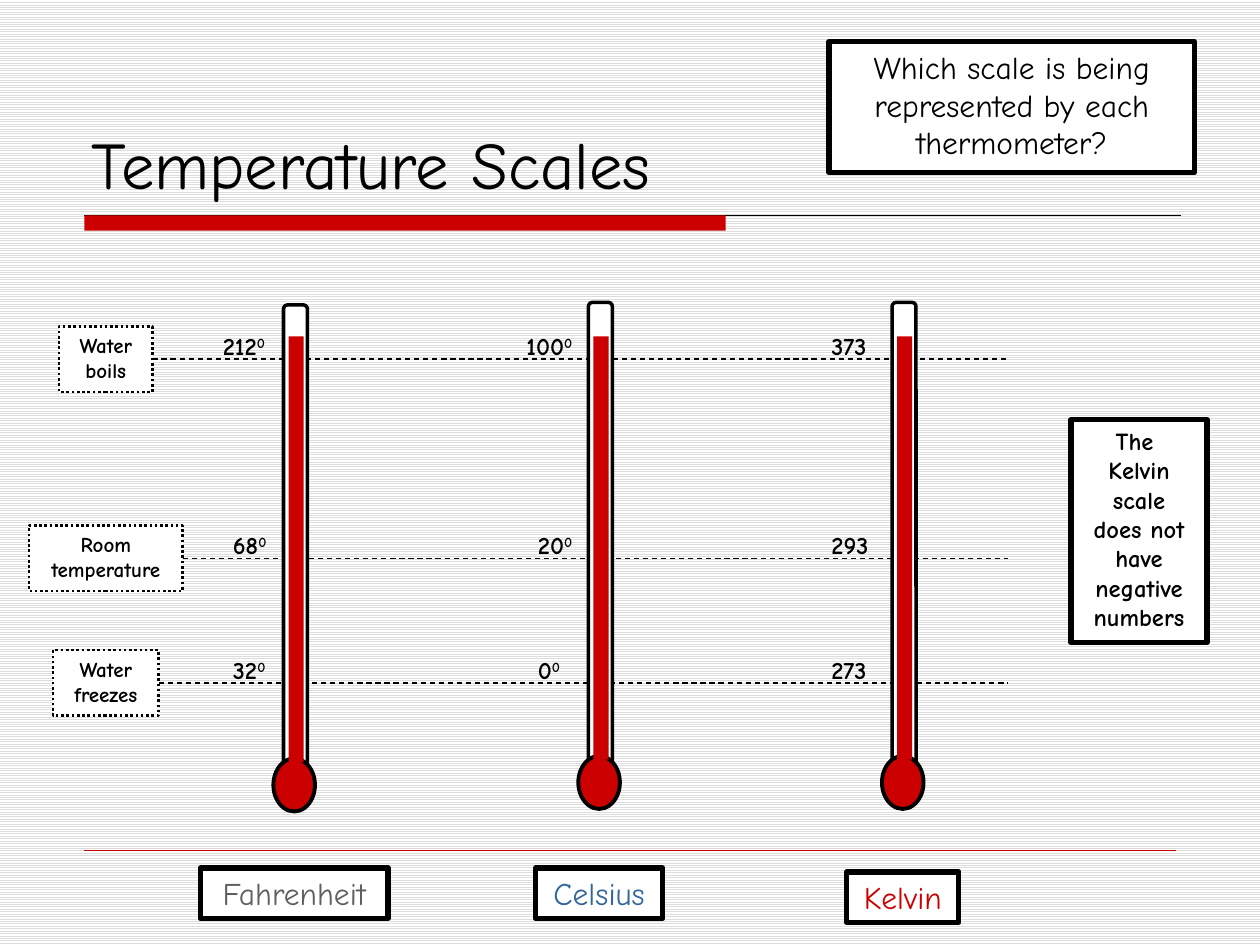
from lxml import etree
from pptx import Presentation
from pptx import util as u
from pptx.dml.color import RGBColor
from pptx.enum import dml, shapes, text
from pptx.oxml.ns import qn

BLACK, WHITE, RED = "000000", "FFFFFF", "CC0000"
SOLID, DASH, DOT = (dml.MSO_LINE.SOLID, dml.MSO_LINE.DASH,
                    dml.MSO_LINE.ROUND_DOT)
SHAPE = shapes.MSO_SHAPE
FIT = text.MSO_AUTO_SIZE.SHAPE_TO_FIT_TEXT


def rgb(value):
    return RGBColor.from_string(value)


class Deck:
    font = "Comic Neue"

    def __init__(self, prs):
        self.s = prs.slides.add_slide(prs.slide_layouts[6])

    def background(self, fore, back):
        fill = self.s.background.fill
        fill.patterned()
        fill.pattern = dml.MSO_PATTERN.LIGHT_HORIZONTAL
        fill.fore_color.rgb = rgb(fore)
        fill.back_color.rgb = rgb(back)

    def shape(self, kind, box, fill, line=0, dash=SOLID):
        sp = self.s.shapes.add_shape(kind, *map(u.Inches, box))
        sp.shadow.inherit = False
        sp.fill.solid()
        sp.fill.fore_color.rgb = rgb(fill)
        if line:
            sp.line.color.rgb = rgb(BLACK)
            sp.line.width = u.Pt(line)
            sp.line.dash_style = dash
        else:
            sp.line.fill.background()
        return sp

    def label(self, sp, words, size, color=BLACK, bold=False, wrap=False,
              align=text.PP_ALIGN.CENTER, anchor=text.MSO_ANCHOR.TOP,
              fit=FIT):
        tf = sp.text_frame
        tf.word_wrap = wrap
        tf.auto_size = fit
        tf.vertical_anchor = anchor
        tf.text = words
        for p in tf.paragraphs:
            p.alignment = align
            for r in p.runs:
                self.style(r, size, color, bold)
        return tf

    def style(self, r, size, color, bold):
        r.font.name = self.font
        r.font.size = u.Pt(size)
        r.font.bold = bold
        r.font.color.rgb = rgb(color)

    def panel(self, box, words, size, color=BLACK, bold=False, wrap=False,
              line=3, dash=SOLID):
        sp = self.shape(SHAPE.RECTANGLE, box, WHITE, line, dash)
        self.label(sp, words, size, color, bold, wrap)
        return sp

    def title(self, box, words):
        sp = self.s.shapes.add_textbox(*map(u.Inches, box))
        self.label(sp, words, 38, wrap=True, align=text.PP_ALIGN.LEFT,
                   anchor=text.MSO_ANCHOR.BOTTOM,
                   fit=text.MSO_AUTO_SIZE.NONE)

    def reading(self, box, number, degree):
        sp = self.s.shapes.add_textbox(*map(u.Inches, box))
        tf = self.label(sp, number, 14, bold=True,
                        align=text.PP_ALIGN.LEFT)
        if degree:
            r = tf.paragraphs[0].add_run()
            r.text = "0"
            self.style(r, 14, BLACK, True)
            r.font._element.set("baseline", "30000")

    def line(self, start, end, color, width, dash=SOLID, source=None):
        c = self.s.shapes.add_connector(
            shapes.MSO_CONNECTOR.STRAIGHT, *map(u.Inches, (*start, *end)))
        c.line.color.rgb = rgb(color)
        c.line.width = u.Pt(width)
        c.line.dash_style = dash
        etree.SubElement(c._element.spPr, qn("a:effectLst"))
        if source is not None:
            c.begin_connect(source, 3)

    def thermometer(self, x, top):
        tube = self.shape(SHAPE.ROUNDED_RECTANGLE, (x, top, 0.19, 3.67),
                          WHITE, 2)
        tube.adjustments[0] = 0.17
        self.shape(SHAPE.OVAL, (x - 0.08, top + 3.6, 0.33, 0.42), RED, 2.25)
        self.shape(SHAPE.RECTANGLE, (x + 0.04, 2.67, 0.12, top + 0.96), RED)


def main():
    prs = Presentation()
    prs.slide_width, prs.slide_height = u.Inches(10), u.Inches(7.5)
    deck = Deck(prs)
    deck.background("DDDDDD", WHITE)

    deck.line((0.67, 1.71), (9.37, 1.71), BLACK, 0.75)
    deck.shape(SHAPE.RECTANGLE, (0.67, 1.71, 5.09, 0.12), RED)
    deck.line((0.67, 6.75), (9.33, 6.75), RED, 0.25)
    deck.title((0.63, 0.33, 8.75, 1.33), "Temperature Scales")

    levels = [
        ("Water\nboils", 2.85, 0.47, 0.74,
         [(1.67, "212"), (4.08, "100"), (6.5, "373")]),
        ("Room\ntemperature", 4.43, 0.23, 1.22,
         [(1.75, "68"), (4.17, "20"), (6.5, "293")]),
        ("Water\nfreezes", 5.42, 0.42, 0.84,
         [(1.75, "32"), (4.17, "0"), (6.5, "273")]),
    ]
    for name, y, left, width, _ in levels:
        box = deck.panel((left, y - 0.26, width, 0.52), name, 12, bold=True,
                         line=1.5, dash=DOT)
        deck.line((left + width, y), (8, y), BLACK, 0.75, DASH, box)

    for x, top in [(2.25, 2.42), (4.67, 2.4), (7.08, 2.4)]:
        deck.thermometer(x, top)

    for _, y, _, _, readings in levels:
        for (x, number), degree in zip(readings, (True, True, False)):
            span = 0.2 + 0.12 * len(number) + (0.08 if degree else 0)
            deck.reading((x, y - 0.27, span, 0.33), number, degree)

    for left, top, width, name, color in [
            (1.59, 6.89, 1.49, "Fahrenheit", "5F5F5F"),
            (4.25, 6.89, 1.01, "Celsius", "336699"),
            (6.72, 6.92, 0.89, "Kelvin", RED)]:
        deck.panel((left, top, width, 0.4), name, 18, color)

    deck.panel((6.58, 0.33, 2.9, 1.04),
               "Which scale is being\nrepresented by each thermometer?",
               18, wrap=True)
    deck.panel((8.5, 3.33, 1.08, 1.77),
               "The \nKelvin\nscale\ndoes not\nhave negative\nnumbers",
               14, bold=True, wrap=True)
    prs.save("out.pptx")


if __name__ == "__main__":
    main()
